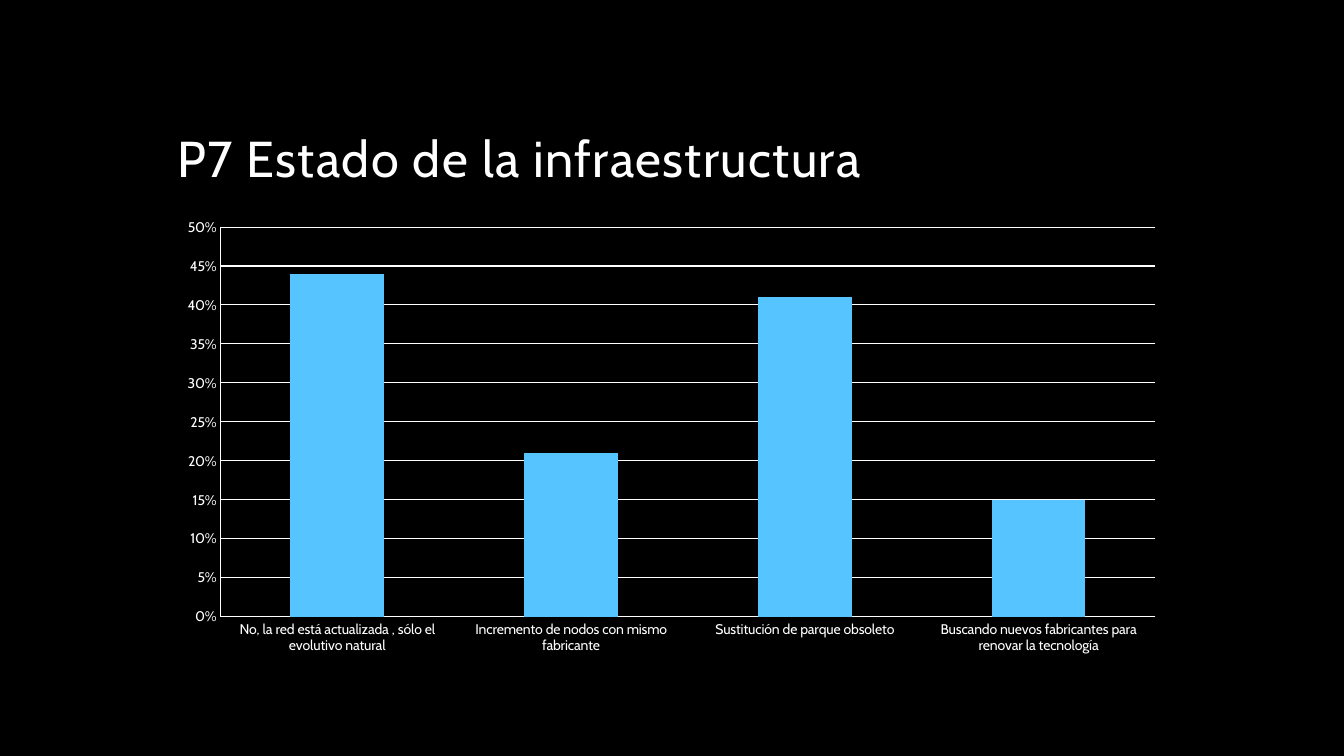
from pptx import Presentation
from pptx import util as u
from pptx.chart.data import CategoryChartData
from pptx.dml.color import RGBColor
from pptx.enum import chart as ch, text as tx

TITLE = "P7 Estado de la infraestructura"
STATES = {
    "No, la red está actualizada , sólo el evolutivo natural": 0.44,
    "Incremento de nodos con mismo fabricante": 0.21,
    "Sustitución de parque obsoleto": 0.41,
    "Buscando nuevos fabricantes para renovar la tecnología": 0.15,
}
COLORS = {"back": "000000", "text": "FFFFFF", "bar": "56C5FF"}
FONT = "Cabin"
LEFT, WIDTH = 1.66, 10


def color(name):
    return RGBColor.from_string(COLORS[name])


def style(font, size):
    font.name = FONT
    font.size = u.Pt(size)
    font.bold = False
    font.color.rgb = color("text")


def add_text(slide, words, box, size, space, track):
    frame = slide.shapes.add_textbox(*map(u.Inches, box)).text_frame
    frame.word_wrap = True
    frame.vertical_anchor = tx.MSO_ANCHOR.BOTTOM
    line = frame.paragraphs[0]
    line.line_spacing = space
    run = line.add_run()
    run.text = words
    style(run.font, size)
    run.font._element.set("spc", str(track * 100))


def add_bars(slide, box):
    data = CategoryChartData(number_format="0%")
    data.categories = list(STATES)
    data.add_series("Series 1", list(STATES.values()))
    kind = ch.XL_CHART_TYPE.COLUMN_CLUSTERED
    chart = slide.shapes.add_chart(kind, *map(u.Inches, box), data).chart
    style(chart.font, 10)
    chart.has_legend = False
    chart.has_title = False
    plot = chart.plots[0]
    plot.gap_width = 150
    plot.vary_by_categories = False
    fill = plot.series[0].format.fill
    fill.solid()
    fill.fore_color.rgb = color("bar")
    rate = chart.value_axis
    rate.minimum_scale, rate.maximum_scale, rate.major_unit = 0, 0.5, 0.05
    rate.has_major_gridlines = True
    rate.tick_labels.number_format = "0%"
    rate.tick_labels.number_format_is_linked = False
    for axis in (rate, chart.category_axis):
        axis.major_tick_mark = axis.minor_tick_mark = ch.XL_TICK_MARK.NONE
    for part in (rate, chart.category_axis, rate.major_gridlines):
        part.format.line.color.rgb = color("text")
        part.format.line.width = u.Pt(0.75)


def main():
    deck = Presentation()
    deck.slide_width, deck.slide_height = u.Inches(13.33), u.Inches(7.5)
    slide = deck.slides.add_slide(deck.slide_layouts[6])
    back = slide.background.fill
    back.solid()
    back.fore_color.rgb = color("back")
    add_text(slide, TITLE, (LEFT, 0.42, WIDTH, 1.5), size=36, space=0.9, track=1)
    add_bars(slide, (LEFT, 2.08, WIDTH, 4.5))
    deck.save("out.pptx")


if __name__ == "__main__":
    main()
